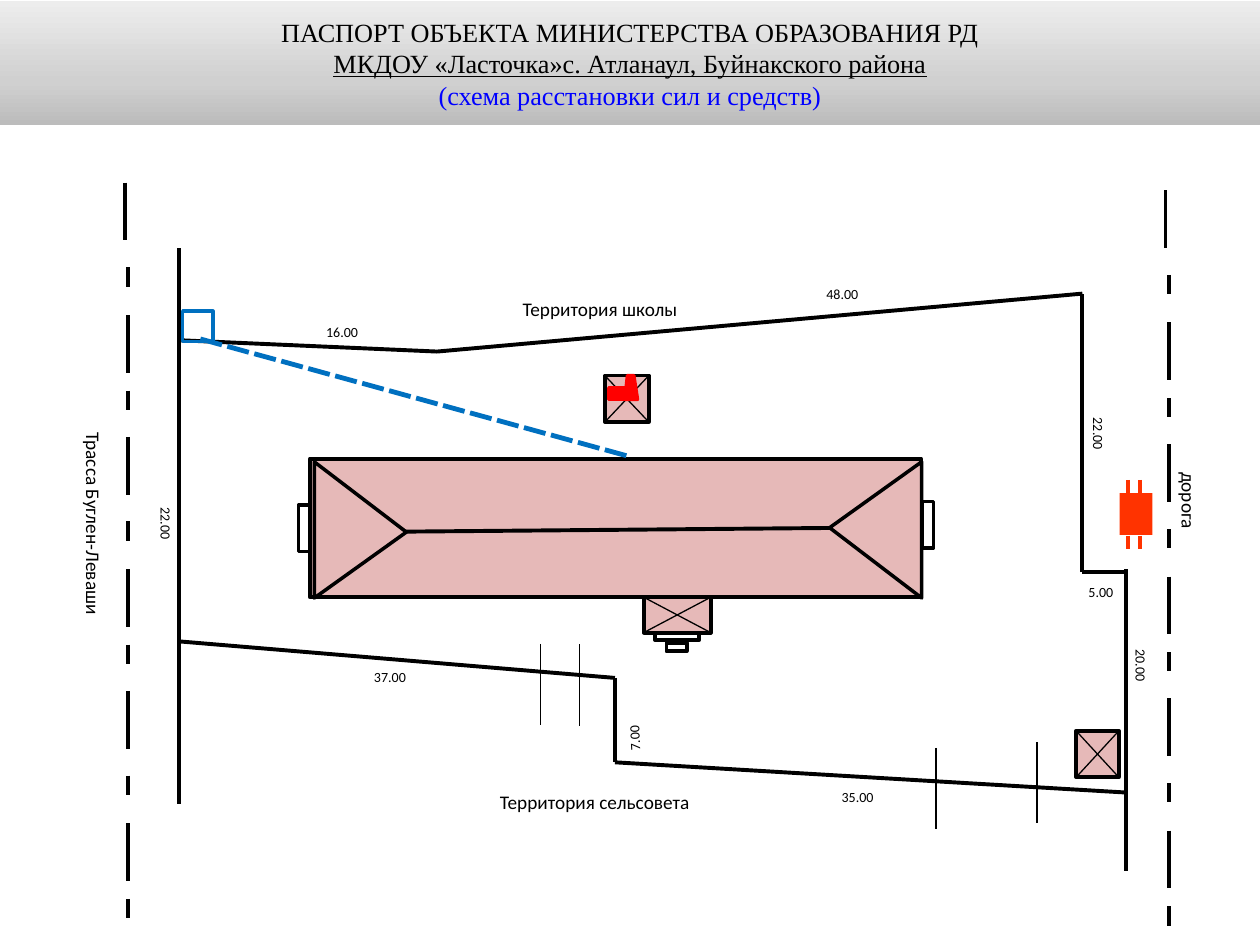
from dataclasses import dataclass
from itertools import pairwise

import pptx
import pptx.dml.color
import pptx.enum.shapes
import pptx.enum.text
import pptx.oxml
import pptx.oxml.ns
import pptx.util
from pptx.util import Pt

SHAPE = pptx.enum.shapes.MSO_SHAPE
COLORS = {
    "black": "000000", "white": "FFFFFF", "roof": "E6B9B8", "title": "0000FF",
    "hydrant": "0070C0", "red": "FF0000", "engine": "FF3300",
}
BANNER_STOPS = ((0, "BCBCBC"), (35, "D0D0D0"), (100, "EDEDED"))


@dataclass(frozen=True)
class Block:
    left: float
    top: float
    width: float
    height: float
    fill: str | None = "roof"
    line: str | None = "black"
    weight: float = 2
    kind: int = SHAPE.RECTANGLE
    rotation: float = 0


@dataclass(frozen=True)
class Label:
    text: str
    left: float
    top: float
    width: float = 46
    height: float = 19
    rotation: float = 0
    size: float = 8


def rgb(name: str) -> pptx.dml.color.RGBColor:
    return pptx.dml.color.RGBColor.from_string(COLORS[name])


def paint(shape, fill: str | None, line: str | None, weight: float) -> None:
    shape.shadow.inherit = False
    if fill:
        shape.fill.solid()
        shape.fill.fore_color.rgb = rgb(fill)
    else:
        shape.fill.background()
    if line:
        shape.line.color.rgb = rgb(line)
        shape.line.width = Pt(weight)
    else:
        shape.line.fill.background()


def draw_block(page, block: Block) -> None:
    shape = page.shapes.add_shape(block.kind, Pt(block.left), Pt(block.top),
                                  Pt(block.width), Pt(block.height))
    shape.rotation = block.rotation
    if block.kind == SHAPE.ISOSCELES_TRIANGLE:
        shape.adjustments[0] = 0.516
    paint(shape, block.fill, block.line, block.weight)


def draw_line(page, start: tuple[float, float], end: tuple[float, float],
              weight: float = 2.25, color: str = "black") -> None:
    line = page.shapes.add_connector(pptx.enum.shapes.MSO_CONNECTOR.STRAIGHT,
                                     Pt(start[0]), Pt(start[1]), Pt(end[0]), Pt(end[1]))
    line.line.color.rgb = rgb(color)
    line.line.width = Pt(weight)
    line._element.spPr.append(pptx.oxml.parse_xml(
        f"<a:effectLst {pptx.oxml.ns.nsdecls('a')}/>"))


def draw_hip_roof(page, block: Block) -> None:
    """Draw a block with lines from its corners to its centre."""
    draw_block(page, block)
    centre = (block.left + block.width / 2, block.top + block.height / 2)
    for x in (block.left, block.left + block.width):
        for y in (block.top, block.top + block.height):
            draw_line(page, (x, y), centre, 0.75)


def draw_road(page, x: float, top: float) -> None:
    """Draw a road edge of alternating long and short dashes."""
    for cycle in range(3):
        for offset, length in ((0, 33), (48.4, 11), (75.6, 33), (118.8, 11)):
            y = top + cycle * 145.2 + offset
            dash_x = x if y == top else x + 1.8
            draw_line(page, (dash_x, y), (dash_x, y + length))


def draw_label(page, label: Label) -> None:
    box = page.shapes.add_textbox(Pt(label.left), Pt(label.top),
                                  Pt(label.width), Pt(label.height))
    box.rotation = label.rotation
    frame = box.text_frame
    frame.word_wrap = True
    frame.auto_size = pptx.enum.text.MSO_AUTO_SIZE.SHAPE_TO_FIT_TEXT
    para = frame.paragraphs[0]
    para.text = label.text
    para.font.name = "Calibri"
    para.font.size = Pt(label.size)
    para.font.color.rgb = rgb("black")


def draw_title(page) -> None:
    title = page.shapes.title
    title.left, title.top, title.width, title.height = Pt(0), Pt(0.7), Pt(720), Pt(70.6)
    stops = "".join(f'<a:gs pos="{pos * 1000}"><a:srgbClr val="{color}"/></a:gs>'
                    for pos, color in BANNER_STOPS)
    title._element.spPr.append(pptx.oxml.parse_xml(
        f"<a:gradFill {pptx.oxml.ns.nsdecls('a')}><a:gsLst>{stops}</a:gsLst>"
        '<a:lin ang="16200000" scaled="1"/></a:gradFill>'))
    frame = title.text_frame
    frame.auto_size = pptx.enum.text.MSO_AUTO_SIZE.NONE
    frame.vertical_anchor = pptx.enum.text.MSO_ANCHOR.MIDDLE
    lines = (
        ("ПАСПОРТ ОБЪЕКТА МИНИСТЕРСТВА ОБРАЗОВАНИЯ РД", "black", False),
        ("МКДОУ «Ласточка»с. Атланаул, Буйнакского района", "black", True),
        ("(схема расстановки сил и средств)", "title", False),
    )
    for index, (text, color, underline) in enumerate(lines):
        para = frame.add_paragraph() if index else frame.paragraphs[0]
        para.text = text
        para.alignment = pptx.enum.text.PP_ALIGN.CENTER
        para.line_spacing = Pt(18)
        para.font.name = "Times New Roman"
        para.font.size = Pt(15)
        para.font.underline = underline
        para.font.color.rgb = rgb(color)


FENCES = (
    ((643.7, 325.4), (643.7, 497.5)),
    ((643.7, 326.9), (618.5, 326.9), (618.5, 167.8), (249.8, 200.9), (102.2, 194.4)),
    ((102.2, 141.8), (102.2, 459.4)),
    ((102.2, 366.5), (351.4, 387.4), (351.4, 435.6), (643.7, 452.9)),
)
GATE_POSTS = ((308.9, 367.9), (331.2, 368.2), (535, 427.3), (592.6, 424.1))
HOUSE = Block(177.1, 262.1, 349.2, 79.2, weight=2.25)
SHEDS = (
    Block(367.9, 341.3, 38.2, 20.2, weight=2.25),
    Block(345.6, 214.6, 25.2, 26.6),
    Block(614.9, 417.6, 24.5, 26.6),
)
PORCHES = (
    Block(374.4, 361.4, 25.2, 4.3, "white", weight=2.25),
    Block(380.9, 367.2, 11.5, 5, "white", weight=2.25),
    Block(170.6, 288.7, 6.5, 26.6, "white"),
    Block(527, 286.6, 6.5, 26.6, "white"),
)
GABLES = tuple(Block(left, 276.5, 77.8, 52.6, kind=SHAPE.ISOSCELES_TRIANGLE, rotation=turn)
               for left, turn in ((167, 90), (461.5, 270)))
LABELS = (
    Label("35.00", 473.8, 447.1),
    Label("7.00", 339.1, 402.5, 48, rotation=267.1),
    Label("37.00", 206.6, 378.7),
    Label("48.00", 465.1, 159.8),
    Label("16.00", 179.3, 181.4),
    Label("5.00", 614.9, 329.8),
    Label("20.00", 627.8, 379.4, 48, 17.3, 90),
    Label("22.00", 602.6, 246.2, 48, rotation=90),
    Label("22.00", 69.8, 297.4, 48, rotation=90),
    Label("дорога", 622.1, 307.4, 112.3, 23, 90, 11),
    Label("Территория сельсовета", 278.6, 447.8, 235.4, 23.8, size=11),
    Label("Территория школы", 291.6, 166.3, 235.4, 23.8, size=11),
    Label("Трасса Буглен-Леваши", -25.2, 306, 154.8, 23, 90, 11),
)


def draw_fire_equipment(page) -> None:
    draw_block(page, Block(347.8, 221.8, 15.1, 6.5, "red", "red"))
    builder = page.shapes.build_freeform(Pt(364.3), Pt(228.2))
    builder.add_line_segments([(Pt(x), Pt(y)) for x, y in
                               ((362.2, 214.6), (358.6, 214.6), (357.1, 228.2))])
    paint(builder.convert_to_shape(), "red", "red", 2)

    draw_block(page, Block(104.4, 177.8, 17.3, 17.3, None, "hydrant"))
    for step in range(16):
        x, y = 114.5 + 15.41 * step, 193.7 + 4.22 * step
        draw_line(page, (x, y), (x + 12.3, y + 3.4), 2.75, "hydrant")

    draw_block(page, Block(637.2, 284.4, 23.8, 18.7, "engine", None, rotation=90))
    for x in (644.4, 651.6):
        for y in (274.3, 306):
            draw_line(page, (x, y), (x, y + 7.9), color="engine")


def main() -> None:
    deck = pptx.Presentation()
    deck.slide_width, deck.slide_height = Pt(720), Pt(540)
    page = deck.slides.add_slide(deck.slide_layouts[5])
    draw_title(page)
    for fence in FENCES:
        for start, end in pairwise(fence):
            draw_line(page, start, end)
    for block in (HOUSE, *PORCHES, *GABLES):
        draw_block(page, block)
    draw_line(page, (231.8, 303.8), (474.5, 301.7))
    for shed in SHEDS:
        draw_hip_roof(page, shed)
    for x, y in GATE_POSTS:
        draw_line(page, (x, y), (x, y + 46.4), 1)
    for label in LABELS:
        draw_label(page, label)
    draw_fire_equipment(page)
    draw_road(page, 666, 108.7)
    draw_road(page, 71.3, 104.4)
    deck.save("out.pptx")


if __name__ == "__main__":
    main()
